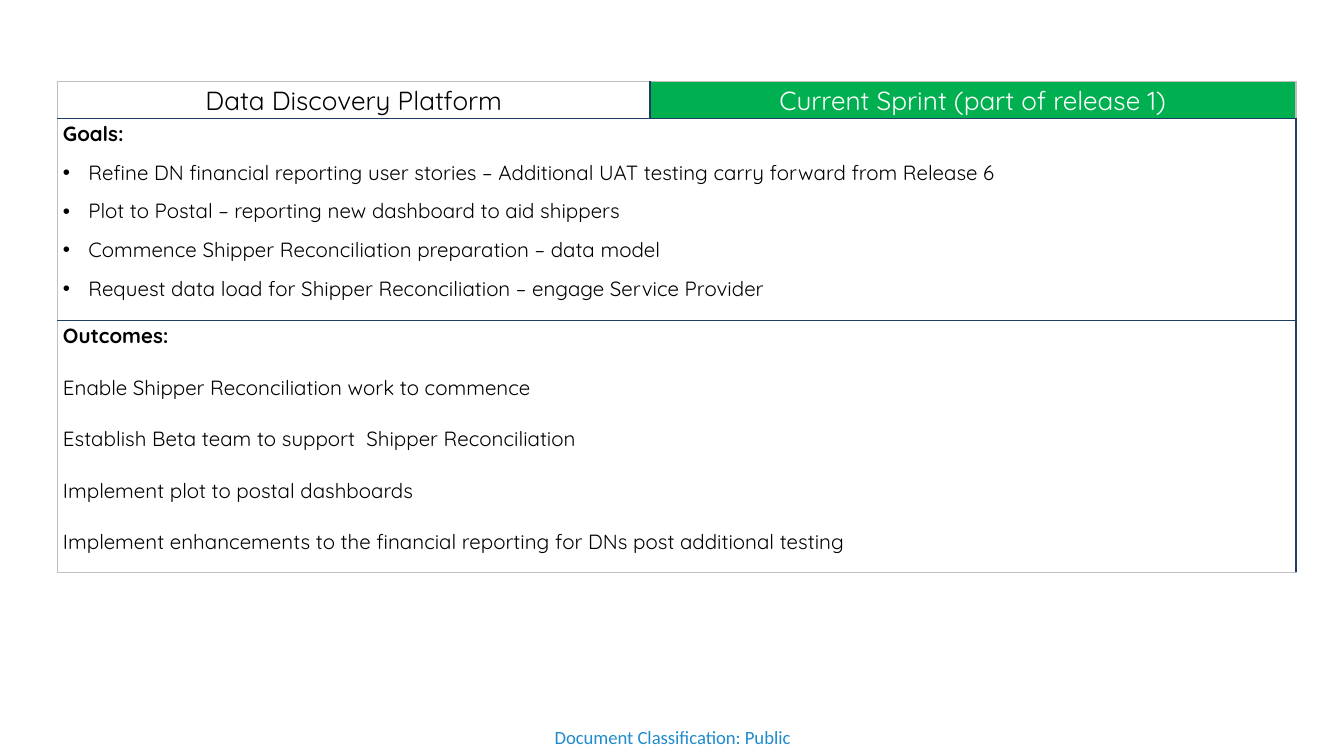
from lxml.etree import SubElement as Sub
from pptx import Presentation
from pptx.dml.color import RGBColor as RGB
from pptx.enum.text import MSO_ANCHOR as ANCHOR, PP_ALIGN as ALIGN
from pptx.oxml.ns import qn
from pptx.util import Cm, Pt

BLACK = RGB(0x00, 0x00, 0x00)
WHITE = RGB(0xFF, 0xFF, 0xFF)
GREEN = RGB(0x00, 0xB0, 0x50)
NAVY = RGB(0x1D, 0x3E, 0x61)
GREY = RGB(0xBF, 0xBF, 0xBF)
BLUE = RGB(0x20, 0x8B, 0xCC)

GOALS = [
    "Refine DN financial reporting user stories – Additional UAT testing carry forward from Release 6",
    "Plot to Postal – reporting new dashboard to aid shippers",
    "Commence Shipper Reconciliation preparation – data model",
    "Request data load for Shipper Reconciliation – engage Service Provider",
]
OUTCOMES = [
    "Enable Shipper Reconciliation work to commence",
    "Establish Beta team to support  Shipper Reconciliation",
    "Implement plot to postal dashboards",
    "Implement enhancements to the financial reporting for DNs post additional testing",
]
COLUMNS = [11.2, 12.2]
ROWS = [0.7, 3.82, 4.76]


class SlideBuilder:
    font = "Quicksand"
    heading_size = 14
    body_size = 11

    def __init__(self, slide):
        self.slide = slide

    def run(self, p, text, size, color=BLACK, bold=False, font=None):
        r = p.add_run()
        r.text = text
        r.font.name = font or self.font
        r.font.size = Pt(size)
        r.font.bold = bold
        r.font.color.rgb = color

    def label(self, text, left, top, width, height):
        sp = self.slide.shapes.add_textbox(Cm(left), Cm(top), Cm(width), Cm(height))
        tf = sp.text_frame
        tf.word_wrap = True
        tf.vertical_anchor = ANCHOR.MIDDLE
        tf.margin_left = tf.margin_right = tf.margin_top = tf.margin_bottom = 0
        p = tf.paragraphs[0]
        p.alignment = ALIGN.CENTER
        self.run(p, text, 10, BLUE, font="Calibri")

    def table(self, left, top, columns, rows):
        frame = self.slide.shapes.add_table(
            len(rows), len(columns), Cm(left), Cm(top), Cm(sum(columns)), Cm(sum(rows)))
        table = frame.table
        table.first_row = table.horz_banding = False
        for column, width in zip(table.columns, columns):
            column.width = Cm(width)
        for row, height in zip(table.rows, rows):
            row.height = Cm(height)
        last_row, last_col = len(rows) - 1, len(columns) - 1
        for i in range(len(rows)):
            for j in range(len(columns)):
                cell = table.cell(i, j)
                cell.margin_left = cell.margin_right = Cm(0.1)
                cell.margin_top = cell.margin_bottom = Cm(0.05)
                self.borders(cell, L=j == 0, R=j == last_col, T=i == 0, B=i == last_row)
                self.fill(cell, WHITE)
        return table

    def borders(self, cell, **outer_sides):
        tcPr = cell._tc.get_or_add_tcPr()
        for side, outer in outer_sides.items():
            ln = Sub(tcPr, qn(f"a:ln{side}"), w=str(Pt(1)))
            fill = Sub(ln, qn("a:solidFill"))
            Sub(fill, qn("a:srgbClr"), val=str(GREY if outer else NAVY))

    def fill(self, cell, color):
        cell.fill.solid()
        cell.fill.fore_color.rgb = color

    def heading(self, cell, text, color, fill):
        self.fill(cell, fill)
        cell.vertical_anchor = ANCHOR.MIDDLE
        p = cell.text_frame.paragraphs[0]
        p.alignment = ALIGN.CENTER
        self.run(p, text, self.heading_size, color)

    def section(self, cell, title, items, bulleted=False):
        tf = cell.text_frame
        self.run(tf.paragraphs[0], title, self.body_size, bold=True)
        for item in items:
            p = tf.add_paragraph()
            if bulleted:
                self.bullet(p)
                p.line_spacing = 1.5
            else:
                p.space_before = Pt(13.75)
            self.run(p, item, self.body_size)

    def bullet(self, p):
        pPr = p._p.get_or_add_pPr()
        indent = Cm(0.48)
        pPr.set("marL", str(indent))
        pPr.set("indent", str(-indent))
        Sub(pPr, qn("a:buFont"), typeface="Arial")
        Sub(pPr, qn("a:buChar"), char="•")


def main():
    prs = Presentation()
    prs.slide_width, prs.slide_height = Cm(25.4), Cm(14.29)
    s = SlideBuilder(prs.slides.add_slide(prs.slide_layouts[6]))

    s.label("Document Classification: Public", 10.03, 13.57, 5.36, 0.74)

    table = s.table(1.09, 1.54, COLUMNS, ROWS)
    s.heading(table.cell(0, 0), "Data Discovery Platform", BLACK, WHITE)
    s.heading(table.cell(0, 1), "Current Sprint (part of release 1)", WHITE, GREEN)
    for row in (1, 2):
        table.cell(row, 0).merge(table.cell(row, 1))
    s.section(table.cell(1, 0), "Goals:", GOALS, bulleted=True)
    s.section(table.cell(2, 0), "Outcomes:", OUTCOMES)

    prs.save("out.pptx")


if __name__ == "__main__":
    main()
